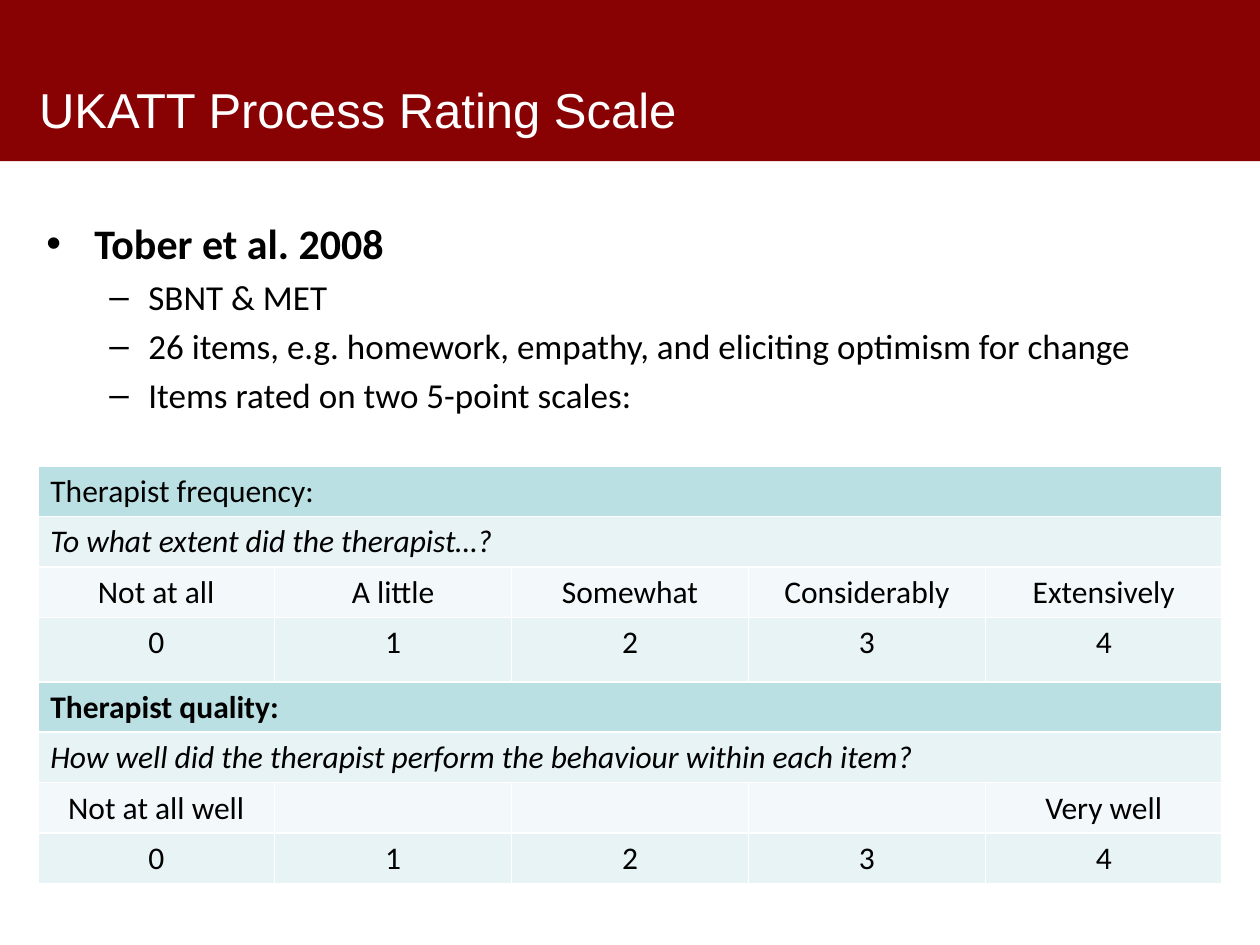
from lxml import etree
from pptx import Presentation
from pptx import util as u
from pptx.dml.color import RGBColor
from pptx.enum import shapes, text
from pptx.oxml.ns import qn

TITLE = "UKATT Process Rating Scale"
POINTS = [
    (0, "Tober et al. 2008"),
    (1, "SBNT & MET"),
    (1, "26 items, e.g. homework, empathy, and eliciting optimism for change"),
    (1, "Items rated on two 5-point scales:"),
]
LEVELS = [
    dict(mark="•", left=0.38, hang=0.38, size=24, bold=True),
    dict(mark="–", left=0.81, hang=0.31, size=20, bold=False),
]
SCORES = ["0", "1", "2", "3", "4"]
ROWS = [
    ("head", ["Therapist frequency:"]),
    ("ask", ["To what extent did the therapist…?"]),
    ("label", ["Not at all", "A little", "Somewhat", "Considerably", "Extensively"]),
    ("score", SCORES),
    ("strong", ["Therapist quality:"]),
    ("ask", ["How well did the therapist perform the behaviour within each item?"]),
    ("label", ["Not at all well", "", "", "", "Very well"]),
    ("score", SCORES),
]
HEIGHTS = [0.4, 0.4, 0.4, 0.51, 0.4, 0.4, 0.4, 0.4]
COLORS = dict(band="890203", white="FFFFFF", black="000000", head="BBE0E3",
              strong="BBE0E3", ask="E7F3F4", label="F3F9FA", score="E7F3F4")


def color(name):
    return RGBColor.from_string(COLORS[name])


def style(para, size, name="Calibri", ink="black", bold=False, italic=False):
    for run in para.runs:
        font = run.font
        font.name, font.size = name, u.Pt(size)
        font.bold, font.italic = bold, italic
        font.color.rgb = color(ink)


def bullet(para, mark, left, hang):
    props = para._p.get_or_add_pPr()
    props.set("marL", str(u.Inches(left)))
    props.set("indent", str(-u.Inches(hang)))
    etree.SubElement(props, qn("a:buFont")).set("typeface", "Arial")
    etree.SubElement(props, qn("a:buChar")).set("char", mark)


def border(cell):
    props = cell._tc.get_or_add_tcPr()
    for side in ("lnL", "lnR", "lnT", "lnB"):
        line = etree.SubElement(props, qn("a:" + side), w=str(u.Pt(1)))
        fill = etree.SubElement(line, qn("a:solidFill"))
        etree.SubElement(fill, qn("a:srgbClr"), val=COLORS["white"])


def add_box(slide, left, top, width, height):
    box = slide.shapes.add_textbox(*map(u.Inches, (left, top, width, height)))
    box.text_frame.word_wrap = True
    return box.text_frame


def add_title(slide):
    band = slide.shapes.add_shape(shapes.MSO_SHAPE.RECTANGLE, 0, 0,
                                  u.Inches(10), u.Inches(1.28))
    band.shadow.inherit = False
    band.fill.solid()
    band.fill.fore_color.rgb = color("band")
    band.line.fill.background()
    frame = add_box(slide, 0.27, 0.11, 6.45, 1.04)
    frame.margin_left = u.Inches(0.04)
    frame.vertical_anchor = text.MSO_ANCHOR.BOTTOM
    frame.text = TITLE
    style(frame.paragraphs[0], 28, "Arial", "white")


def add_points(slide):
    frame = add_box(slide, 0.27, 1.62, 9.46, 1.85)
    frame.margin_top = u.Inches(0.11)
    frame.text = "\n".join(line for _, line in POINTS)
    for i, (para, (depth, _)) in enumerate(zip(frame.paragraphs, POINTS)):
        level = LEVELS[depth]
        para.level = depth
        if i:
            para.space_before = u.Pt(level["size"] / 5)
        bullet(para, level["mark"], level["left"], level["hang"])
        style(para, level["size"], bold=level["bold"])


def add_scales(slide):
    count = len(SCORES)
    shape = slide.shapes.add_table(len(ROWS), count, u.Inches(0.3), u.Inches(3.7),
                                   u.Inches(9.4), u.Inches(sum(HEIGHTS)))
    table = shape.table
    table.first_row = table.horz_banding = False
    for r, (kind, words) in enumerate(ROWS):
        table.rows[r].height = u.Inches(HEIGHTS[r])
        for c in range(count):
            cell = table.cell(r, c)
            border(cell)
            cell.fill.solid()
            cell.fill.fore_color.rgb = color(kind)
        if len(words) == 1:
            table.cell(r, 0).merge(table.cell(r, count - 1))
        for c, word in enumerate(words):
            if not word:
                continue
            cell = table.cell(r, c)
            cell.text = word
            para = cell.text_frame.paragraphs[0]
            if len(words) > 1:
                para.alignment = text.PP_ALIGN.CENTER
            style(para, 18, bold=kind == "strong", italic=kind == "ask")


def main():
    deck = Presentation()
    deck.slide_width, deck.slide_height = u.Inches(10), u.Inches(7.5)
    slide = deck.slides.add_slide(deck.slide_layouts[6])
    add_title(slide)
    add_points(slide)
    add_scales(slide)
    deck.save("out.pptx")


if __name__ == "__main__":
    main()
